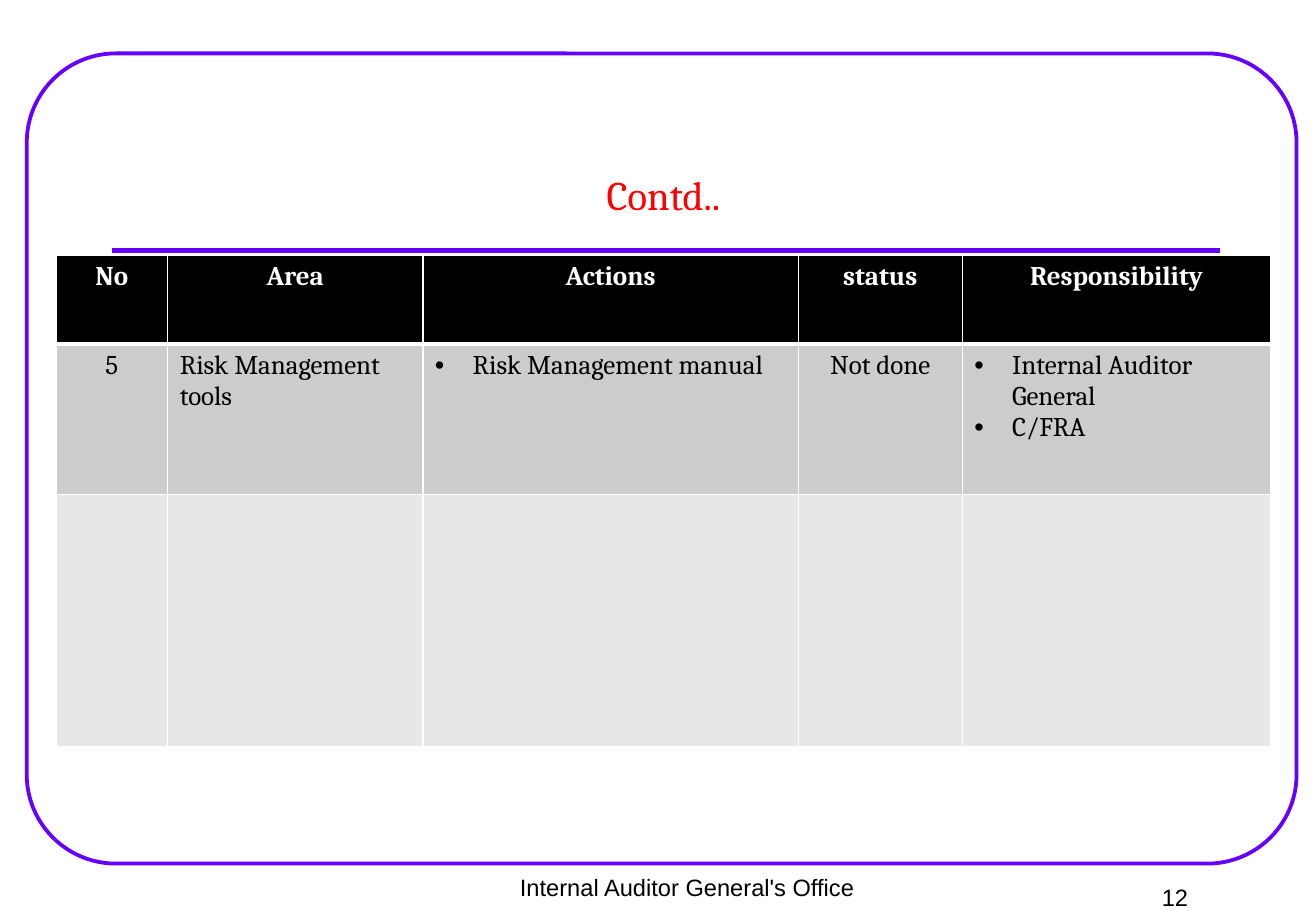
import pptx
import pptx.util
import pptx.dml.color
import pptx.enum.shapes
import pptx.enum.text
import pptx.oxml
import pptx.oxml.ns
from lxml import etree

PX = 9144  # 100 px to the inch
COLORS = {"violet": "6600FF", "red": "FF0000", "black": "000000", "white": "FFFFFF",
          "row_dark": "CCCCCC", "row_light": "E7E7E7"}
ALIGN = pptx.enum.text.PP_ALIGN
ANCHOR = pptx.enum.text.MSO_ANCHOR
SHAPES = pptx.enum.shapes


def rgb(name):
    return pptx.dml.color.RGBColor.from_string(COLORS[name])


def write(paragraph, text, align, font_name, size, color, bold=False):
    paragraph.alignment = align
    run = paragraph.add_run()
    run.text = text
    font_format = {"name": font_name, "size": pptx.util.Pt(size), "bold": bold}
    for attribute, value in font_format.items():
        setattr(run.font, attribute, value)
    run.font.color.rgb = rgb(color)


deck = pptx.Presentation()
deck.slide_width, deck.slide_height = 1083 * PX, 750 * PX
slide = deck.slides.add_slide(deck.slide_layouts[6])

# Rounded frame
frame = slide.shapes.add_shape(SHAPES.MSO_SHAPE.ROUNDED_RECTANGLE,
                               22 * PX, 44 * PX, 1045 * PX, 667 * PX)
frame.adjustments[0] = 0.11
frame.shadow.inherit = False
frame.fill.background()
frame.line.color.rgb = rgb("violet")
frame.line.width = pptx.util.Pt(2.25)

# Rule under the title
rule = slide.shapes.add_connector(SHAPES.MSO_CONNECTOR.STRAIGHT,
                                  92 * PX, 206 * PX, 1004 * PX, 206 * PX)
rule.line.color.rgb = rgb("violet")
rule.line.width = pptx.util.Pt(3)
etree.SubElement(rule._element.spPr, pptx.oxml.ns.qn("a:effectLst"))

# Title, footer and page number
for text, box, anchor, font_name, size, color in [
    ("Contd..", (90, 60, 912, 125), ANCHOR.BOTTOM, "Cambria", 24, "red"),
    ("Internal Auditor General's Office", (361, 714, 409, 36), ANCHOR.TOP, "Arial", 14, "black"),
    ("12", (872, 722, 190, 28), ANCHOR.TOP, "Arial", 14, "black"),
]:
    frame_text = slide.shapes.add_textbox(*[length * PX for length in box]).text_frame
    frame_text.word_wrap = True
    frame_text.vertical_anchor = anchor
    write(frame_text.paragraphs[0], text, ALIGN.CENTER, font_name, size, color)

# Action table: each cell is a list of paragraphs
column_widths = [92, 210, 309, 135, 254]
row_heights = [73, 124, 208]
row_fills = ["black", "row_dark", "row_light"]
rows = [
    [["No"], ["Area"], ["Actions"], ["status"], ["Responsibility"]],
    [["5"], ["Risk Management tools"], ["Risk Management manual"], ["Not done"],
     ["Internal Auditor General", "C/FRA"]],
    [[], [], [], [], []],
]
left_columns = {1, 2, 4}
bullet_columns = {2, 4}

actions = slide.shapes.add_table(len(rows), len(column_widths), 46 * PX, 210 * PX,
                                 sum(column_widths) * PX, sum(row_heights) * PX).table
for column, width in zip(actions.columns, column_widths):
    column.width = width * PX
for row, height in zip(actions.rows, row_heights):
    row.height = height * PX

for r, row in enumerate(rows):
    for c, paragraphs in enumerate(row):
        cell = actions.cell(r, c)

        # White borders, heavier between header and body
        border_points = {"lnL": 1, "lnR": 1, "lnT": 3 if r == 1 else 1, "lnB": 3 if r == 0 else 1}
        for side, points in border_points.items():
            cell._tc.get_or_add_tcPr().append(pptx.oxml.parse_xml(
                f'<a:{side} {pptx.oxml.ns.nsdecls("a")} w="{pptx.util.Pt(points)}"><a:solidFill>'
                f'<a:srgbClr val="{COLORS["white"]}"/></a:solidFill></a:{side}>'))
        cell.fill.solid()
        cell.fill.fore_color.rgb = rgb(row_fills[r])

        # Cell text
        header = r == 0
        align = ALIGN.LEFT if not header and c in left_columns else ALIGN.CENTER
        for i, text in enumerate(paragraphs):
            paragraph = cell.text_frame.add_paragraph() if i else cell.text_frame.paragraphs[0]
            if not header and c in bullet_columns:
                properties = paragraph._p.get_or_add_pPr()
                properties.set("marL", str(31 * PX))
                properties.set("indent", str(-31 * PX))
                etree.SubElement(properties, pptx.oxml.ns.qn("a:buFont"), typeface="Arial")
                etree.SubElement(properties, pptx.oxml.ns.qn("a:buChar"), char="•")
            write(paragraph, text, align, "Cambria", 16, "white" if header else "black", header)

deck.save("out.pptx")
